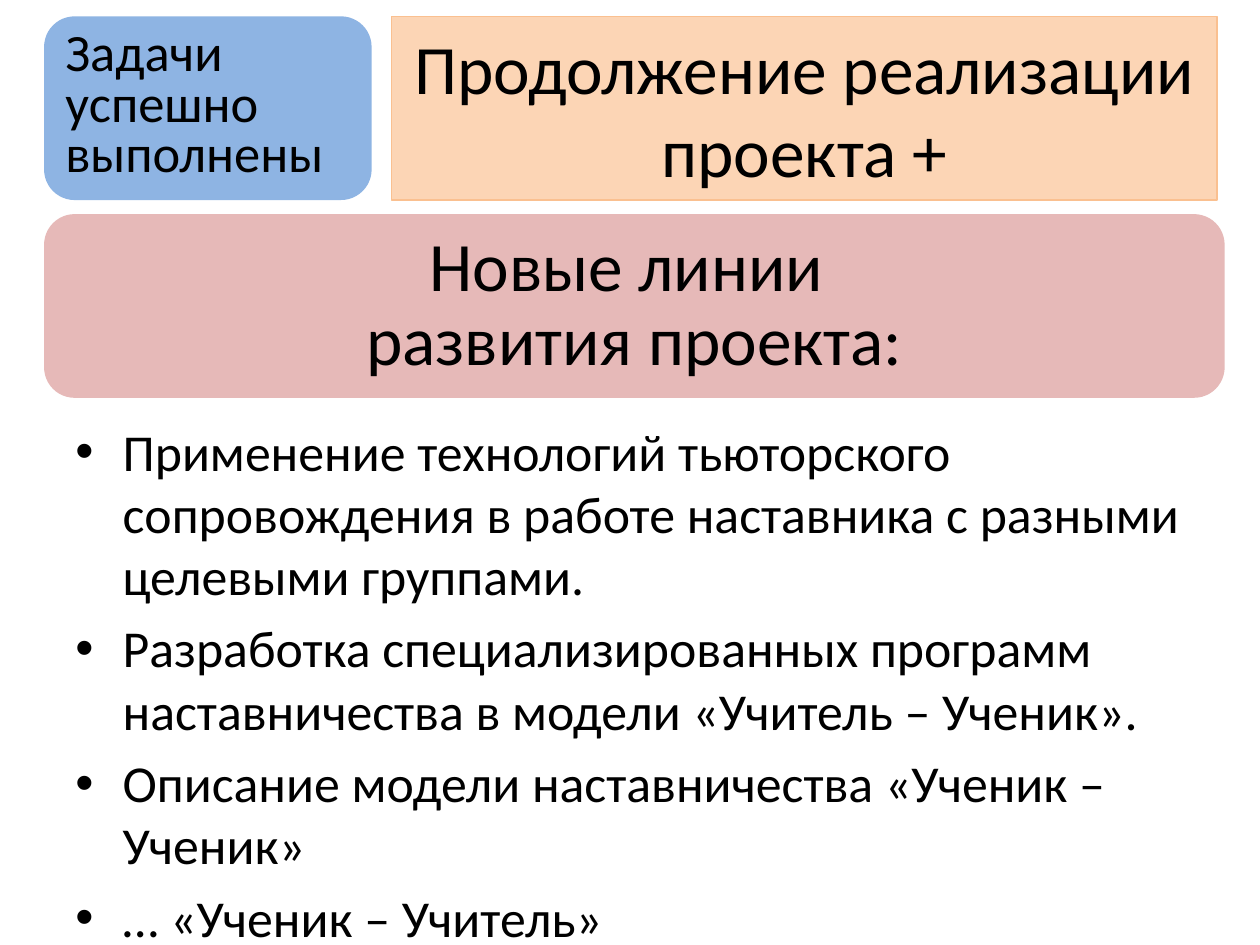
import dataclasses

import pptx
import pptx.dml.color
import pptx.enum.shapes
import pptx.enum.text
import pptx.oxml.ns
import pptx.util
from lxml import etree

Pt = pptx.util.Pt
SHAPE = pptx.enum.shapes.MSO_SHAPE
ALIGN = pptx.enum.text.PP_ALIGN
ANCHOR = pptx.enum.text.MSO_ANCHOR


@dataclasses.dataclass(frozen=True)
class Theme:
    font: str = "Calibri"
    text: str = "000000"
    blue: str = "8EB4E3"
    peach: str = "FCD5B5"
    peach_line: str = "FAC090"
    pink: str = "E6B9B8"
    heading: float = 39.6
    status: float = 30
    body: float = 29.6


THEME = Theme()
GOALS = [
    "Применение технологий тьюторского сопровождения в работе наставника с разными целевыми группами.",
    "Разработка специализированных программ наставничества в модели «Учитель – Ученик».",
    "Описание модели наставничества «Ученик – Ученик»",
    "… «Ученик – Учитель»",
]


def rgb(value):
    return pptx.dml.color.RGBColor.from_string(value)


def write(p, text, size, align=ALIGN.LEFT, spacing=None, before=0):
    """Fill a paragraph; a vertical tab in the text becomes a line break."""
    p.text = text
    p.alignment = align
    p.line_spacing = spacing
    p.space_before = Pt(before)
    for r in p.runs:
        r.font.name = THEME.font
        r.font.size = Pt(size)
        r.font.color.rgb = rgb(THEME.text)


def add_bullet(p, indent):
    pPr = p._p.get_or_add_pPr()
    pPr.set("marL", str(Pt(indent)))
    pPr.set("indent", str(-Pt(indent)))
    font = etree.SubElement(pPr, pptx.oxml.ns.qn("a:buFont"))
    font.set("typeface", "Arial")
    etree.SubElement(pPr, pptx.oxml.ns.qn("a:buChar")).set("char", "•")


def add_panel(s, box, text, kind, fill, size, line=None, anchor=ANCHOR.MIDDLE, **fmt):
    sp = s.shapes.add_shape(kind, *map(Pt, box))
    sp.shadow.inherit = False
    sp.fill.solid()
    sp.fill.fore_color.rgb = rgb(fill)
    if line:
        sp.line.color.rgb = rgb(line)
        sp.line.width = Pt(0.75)
    else:
        sp.line.fill.background()
    tf = sp.text_frame
    tf.word_wrap = True
    tf.vertical_anchor = anchor
    write(tf.paragraphs[0], text, size, **fmt)


def add_header(s, left, top, width, height):
    """Status and title side by side, with the subtitle band below."""
    status_w, title_x, title_w, row_step = 187.2, 198.7, 471.6, 113
    add_panel(s, (left + title_x, top, title_w, height),
              "Продолжение реализации проекта +", SHAPE.RECTANGLE,
              THEME.peach, THEME.heading, line=THEME.peach_line, align=ALIGN.CENTER)
    add_panel(s, (left, top, status_w, height),
              "Задачи успешно выполнены", SHAPE.ROUNDED_RECTANGLE,
              THEME.blue, THEME.status, anchor=ANCHOR.TOP, spacing=0.8, before=10)
    add_panel(s, (left, top + row_step, width, height),
              "Новые линии \vразвития проекта:", SHAPE.ROUNDED_RECTANGLE,
              THEME.pink, THEME.heading, align=ALIGN.CENTER, spacing=0.9)


def add_goals(s, left, top, width, height):
    tf = s.shapes.add_textbox(*map(Pt, (left, top, width, height))).text_frame
    tf.word_wrap = True
    for i, goal in enumerate(GOALS):
        p = tf.add_paragraph() if i else tf.paragraphs[0]
        write(p, goal, THEME.body, before=6)
        add_bullet(p, 27)


def main():
    prs = pptx.Presentation()
    prs.slide_width, prs.slide_height = Pt(720), Pt(540)
    s = prs.slides.add_slide(prs.slide_layouts[6])
    add_header(s, 25.2, 9.36, 674.64, 105)
    add_goals(s, 36, 236, 648, 278)
    prs.save("out.pptx")


if __name__ == "__main__":
    main()
